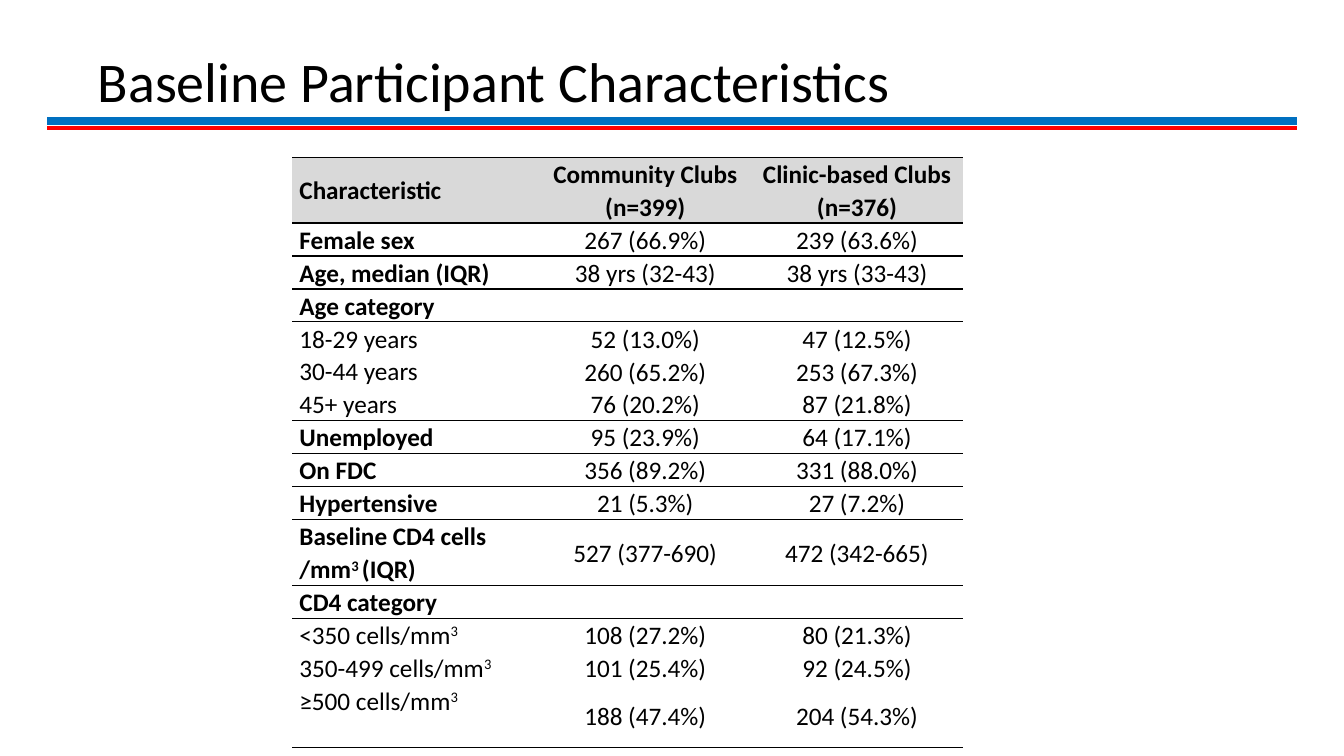
from lxml import etree
from pptx import Presentation
from pptx.dml.color import RGBColor
from pptx.enum.shapes import MSO_CONNECTOR
from pptx.enum.text import MSO_ANCHOR, PP_ALIGN
from pptx.oxml.ns import qn
from pptx.util import Inches, Pt

LEFT, CENTER = PP_ALIGN.LEFT, PP_ALIGN.CENTER
TOP, MIDDLE = MSO_ANCHOR.TOP, MSO_ANCHOR.MIDDLE
STRAIGHT = MSO_CONNECTOR.STRAIGHT
FONT = "Calibri"
PLAIN_TABLE = "{2D5ABB26-0587-4C30-8999-92F81FD0307C}"
COLORS = {"text": "000000", "header": "D9D9D9", "blue": "0070C0", "red": "FF0000"}

# Content: text between carets is superscript
TITLE = "Baseline Participant Characteristics"
HEADER = ("Characteristic", "Community Clubs (n=399)", "Clinic-based Clubs (n=376)")
# Each group: bold heading row, then its plain category rows
GROUPS = [
    [("Female sex", "267 (66.9%)", "239 (63.6%)")],
    [("Age, median (IQR)", "38 yrs (32-43)", "38 yrs (33-43)")],
    [("Age category", "", ""),
     ("18-29 years", "52 (13.0%)", "47 (12.5%)"),
     ("30-44 years", "260 (65.2%)", "253 (67.3%)"),
     ("45+ years", "76 (20.2%)", "87 (21.8%)")],
    [("Unemployed", "95 (23.9%)", "64 (17.1%)")],
    [("On FDC", "356 (89.2%)", "331 (88.0%)")],
    [("Hypertensive", "21 (5.3%)", "27 (7.2%)")],
    [("Baseline CD4 cells /mm^3 ^(IQR)", "527 (377-690)", "472 (342-665)")],
    [("CD4 category", "", ""),
     ("<350 cells/mm^3", "108 (27.2%)", "80 (21.3%)"),
     ("350-499 cells/mm^3", "101 (25.4%)", "92 (24.5%)"),
     ("≥500 cells/mm^3", "188 (47.4%)", "204 (54.3%)")],
]
RULES = [(1.2, "blue", 6), (1.27, "red", 3)]
COLUMN_WIDTHS = (2.45, 2.1, 2.1)
ROW_HEIGHT, TALL_ROW = 0.31, 0.63


def write(frame, text, size=18, bold=False, align=LEFT, spacing=1.07):
    para = frame.paragraphs[0]
    para.alignment = align
    para.line_spacing = spacing
    para.font.size = Pt(size)
    for index, part in enumerate(text.split("^")):
        if not part:
            continue
        span = para.add_run()
        span.text = part
        span.font.name = FONT
        span.font.size = Pt(size)
        span.font.bold = bold
        span.font.color.rgb = RGBColor.from_string(COLORS["text"])
        if index % 2:
            span.font._element.set("baseline", "30000")


def add_border(cell, side):
    line = etree.SubElement(cell._tc.get_or_add_tcPr(), qn("a:" + side), w=str(Pt(1)))
    fill = etree.SubElement(line, qn("a:solidFill"))
    etree.SubElement(fill, qn("a:srgbClr"), val=COLORS["text"])


def fill_row(table, row, texts, bold_columns, ruled):
    for column, text in enumerate(texts):
        cell = table.cell(row, column)
        cell.margin_left = cell.margin_right = Inches(0.07)
        cell.margin_top = cell.margin_bottom = 0
        cell.vertical_anchor = MIDDLE if column or row == 0 else TOP
        write(cell.text_frame, text, bold=column in bold_columns,
              align=CENTER if column else LEFT)
        if row == 0:
            add_border(cell, "lnT")
        if ruled:
            add_border(cell, "lnB")
        if row == 0:
            cell.fill.solid()
            cell.fill.fore_color.rgb = RGBColor.from_string(COLORS["header"])
        else:
            cell.fill.background()


deck = Presentation()
deck.slide_width, deck.slide_height = Inches(13.33), Inches(7.5)
page = deck.slides.add_slide(deck.slide_layouts[5])

# Title
title = page.shapes.title
title.left, title.top, title.width, title.height = map(Inches, (0.87, 0.11, 11.5, 1.45))
title.text_frame.vertical_anchor = MIDDLE
write(title.text_frame, TITLE, size=40, spacing=0.9)

# Table
row_count = 1 + sum(len(group) for group in GROUPS)
frame = page.shapes.add_table(row_count, len(HEADER), Inches(2.9), Inches(1.56),
                              Inches(sum(COLUMN_WIDTHS)), Inches(5.78))
table = frame.table
table.first_row = table.horz_banding = False
table._tbl.tblPr.find(qn("a:tableStyleId")).text = PLAIN_TABLE
for column, width in zip(table.columns, COLUMN_WIDTHS):
    column.width = Inches(width)
for index, row in enumerate(table.rows):
    row.height = Inches(TALL_ROW if index in (0, row_count - 1) else ROW_HEIGHT)

fill_row(table, 0, HEADER, bold_columns=(0, 1, 2), ruled=True)
row_number = 1
for group in GROUPS:
    for place, texts in enumerate(group):
        fill_row(table, row_number, texts, bold_columns=() if place else (0,),
                 ruled=place in (0, len(group) - 1))
        row_number += 1

# Rules under the title
for top, color, weight in RULES:
    rule = page.shapes.add_connector(STRAIGHT, Inches(0.47), Inches(top),
                                     Inches(12.86), Inches(top))
    rule.line.color.rgb = RGBColor.from_string(COLORS[color])
    rule.line.width = Pt(weight)
    etree.SubElement(rule._element.spPr, qn("a:effectLst"))

deck.save("out.pptx")
